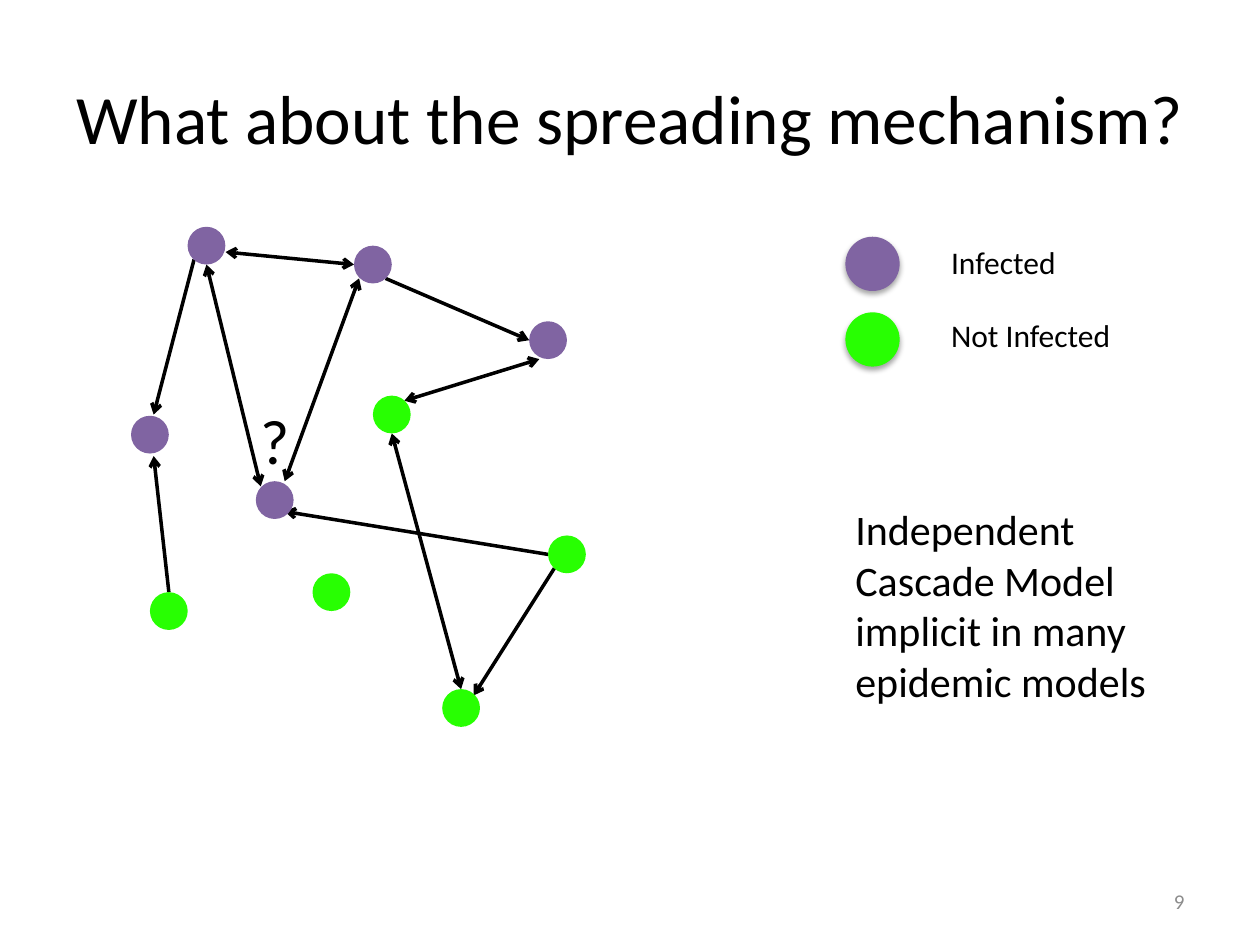
from lxml.etree import SubElement
from pptx import Presentation
from pptx.dml.color import RGBColor
from pptx.enum.shapes import MSO_CONNECTOR as Line, MSO_SHAPE as Preset
from pptx.enum.text import MSO_ANCHOR as Anchor, PP_ALIGN as Align
from pptx.oxml.ns import qn
from pptx.util import Pt

INFECTED, HEALTHY = "8064A2", "28FF02"
BLACK, WHITE, GREY = "000000", "FFFFFF", "8C8C8C"
NODE_SIZE, KEY_SIZE = 21.6, 31

# Centres of the people in the network
NODES = {
    INFECTED: [(118, 140.4), (213.1, 151.2), (85.7, 248.4), (157, 285.8), (313.2, 194.4)],
    HEALTHY: [(324, 316.8), (189.4, 338.4), (223.9, 236.9), (96.5, 349.2), (263.5, 404.6)],
}
ONE_WAY = [
    ((220.3, 159.1), (302.4, 194.4)),
    ((313.2, 316.8), (162.7, 292.3)),
    ((96.5, 338.4), (87.8, 260.6)),
    ((316.8, 324.7), (270.7, 397.4)),
    ((110.9, 148.3), (87.8, 236.9)),
]
TWO_WAY = [
    ((308.2, 205.2), (231.1, 229)),
    ((118, 151.2), (149, 277.9)),
    ((202.3, 151.2), (128.9, 144)),
    ((205.2, 159.1), (162.7, 275)),
    ((263.5, 393.8), (223.9, 247.7)),
]
LEGEND = [  # label, colour, circle centre, label top
    ("Infected", INFECTED, (498.6, 150.8), 135.4),
    ("Not Infected", HEALTHY, (498.6, 194), 177.1),
]


def rgb(value):
    return RGBColor.from_string(value)


def add_text(slide, lines, box, size, color=BLACK, align=Align.LEFT, **frame_format):
    label = slide.shapes.add_textbox(*map(Pt, box))
    frame = label.text_frame
    frame.word_wrap = True
    for name, value in frame_format.items():
        setattr(frame, name, value)
    frame.text = "\n".join(lines)
    for paragraph in frame.paragraphs:
        paragraph.alignment = align
        font = paragraph.runs[0].font
        font.name, font.size = "Calibri", Pt(size)
        font.color.rgb = rgb(color)
    return label


def add_circle(slide, centre, size, color):
    x, y = centre
    circle = slide.shapes.add_shape(
        Preset.OVAL, Pt(x - size / 2), Pt(y - size / 2), Pt(size), Pt(size))
    circle.shadow.inherit = False
    circle.fill.solid()
    circle.fill.fore_color.rgb = rgb(color)
    circle.line.fill.background()
    return circle


def add_drop_shadow(shape):
    effects = shape.element.spPr.find(qn("a:effectLst"))
    shadow = SubElement(effects, qn("a:outerShdw"), blurRad=str(Pt(3.1)),
                        dist=str(Pt(1.8)), dir="5400000", rotWithShape="0")
    color = SubElement(shadow, qn("a:srgbClr"), val=BLACK)
    SubElement(color, qn("a:alpha"), val="35000")


def add_arrow(slide, start, end, ends):
    arrow = slide.shapes.add_connector(Line.STRAIGHT, *map(Pt, start + end))
    arrow.line.width = Pt(2)
    arrow.line.color.rgb = rgb(BLACK)
    stroke = arrow.line._get_or_add_ln()
    for tag in ends:
        SubElement(stroke, qn(tag), type="arrow")
    SubElement(arrow.element.spPr, qn("a:effectLst"))


def add_network(slide):
    for start, end in ONE_WAY:
        add_arrow(slide, start, end, ["a:tailEnd"])
    for start, end in TWO_WAY:
        add_arrow(slide, start, end, ["a:headEnd", "a:tailEnd"])
    for color, centres in NODES.items():
        for centre in centres:
            add_circle(slide, centre, NODE_SIZE, color)
    add_text(slide, ["?"], (141.8, 226.1, 17.3, 94.3), 36)


def add_legend(slide):
    for label, color, centre, top in LEGEND:
        add_drop_shadow(add_circle(slide, centre, KEY_SIZE, color))
        add_text(slide, [label], (536.4, top, 145.4, 28.8), 18)


def main():
    deck = Presentation()
    deck.slide_width, deck.slide_height = Pt(720), Pt(540)
    slide = deck.slides.add_slide(deck.slide_layouts[6])

    add_text(slide, ["What about the spreading mechanism?"], (36, 21.6, 648, 90), 39.6,
             align=Align.CENTER, vertical_anchor=Anchor.MIDDLE,
             margin_left=0, margin_right=0)
    add_text(slide, ["9"], (516, 500.5, 168, 28.8), 12, GREY,
             align=Align.RIGHT, vertical_anchor=Anchor.MIDDLE)
    note = add_text(slide, ["Independent", "Cascade Model implicit in many epidemic models"],
                    (481.7, 284.4, 203.8, 123.8), 24)
    note.fill.solid()
    note.fill.fore_color.rgb = rgb(WHITE)
    add_network(slide)
    add_legend(slide)
    deck.save("out.pptx")


if __name__ == "__main__":
    main()
